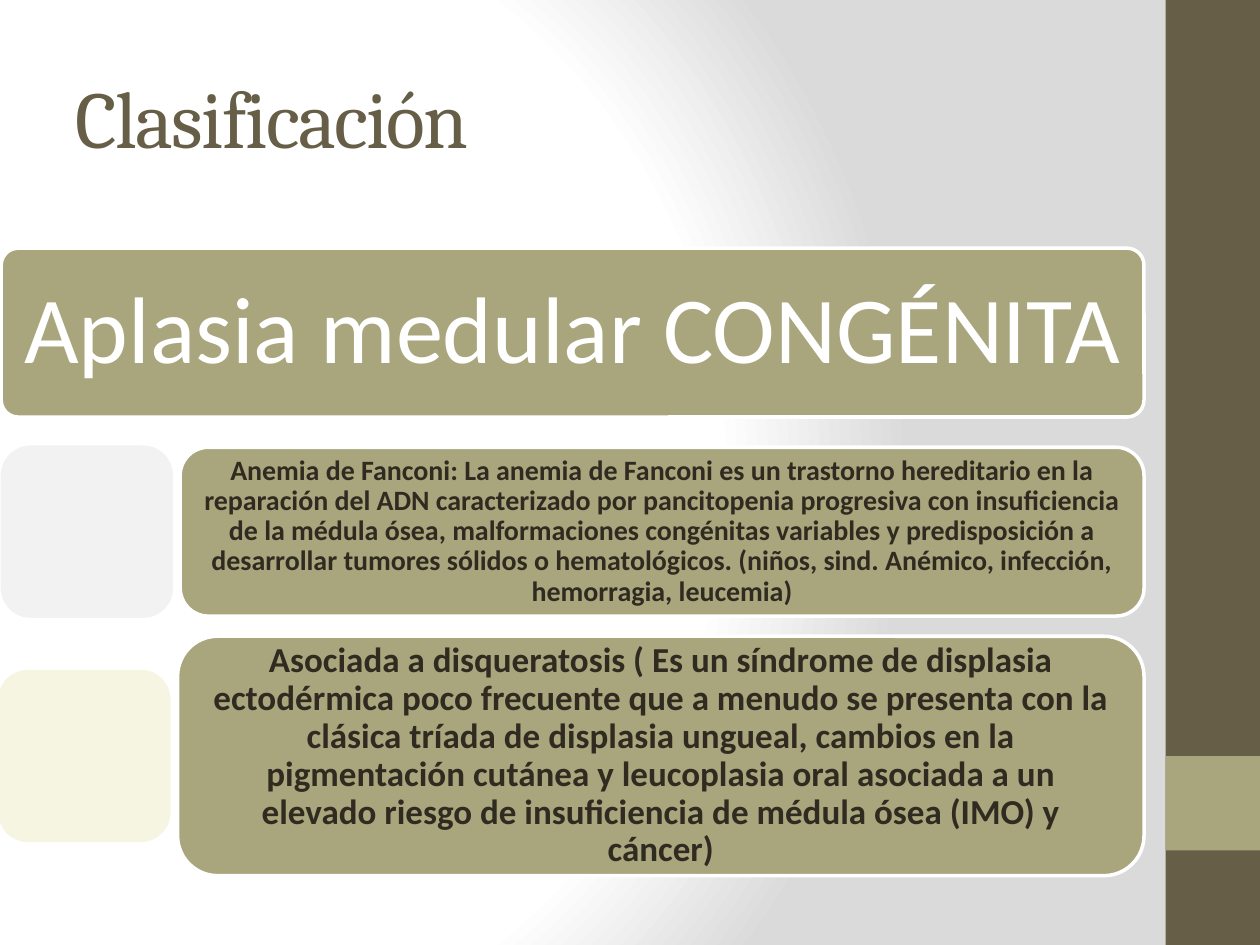
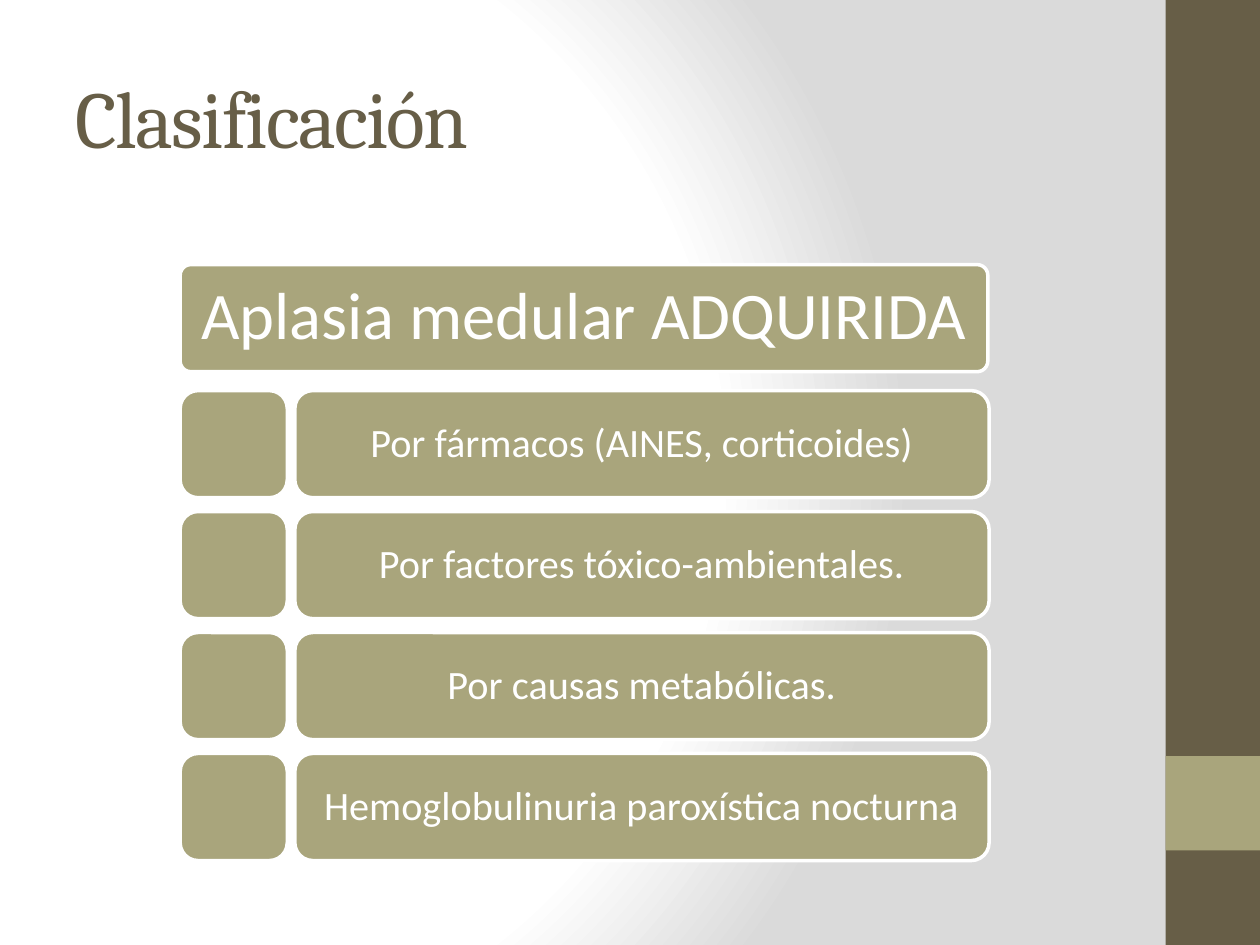
"""Two slides on the classification of medullary aplasia: congenital and acquired."""
from lxml import etree
from pptx import Presentation
from pptx.dml.color import RGBColor
from pptx.enum.shapes import MSO_SHAPE
from pptx.enum.text import MSO_ANCHOR, PP_ALIGN
from pptx.oxml import parse_xml
from pptx.oxml.ns import nsdecls, qn
from pptx.util import Inches, Pt

RECT, ROUNDED = MSO_SHAPE.RECTANGLE, MSO_SHAPE.ROUNDED_RECTANGLE
MIDDLE = MSO_ANCHOR.MIDDLE
LEFT, CENTER = PP_ALIGN.LEFT, PP_ALIGN.CENTER

COLORS = {
    "brown": "675E47",
    "olive": "A9A57C",
    "dark": "2F2B20",
    "white": "FFFFFF",
    "gray": "DADADA",
    "pale_gray": "F2F2F2",
    "cream": "F6F5E2",
}
HEADING_FONT, BODY_FONT = "Cambria", "Calibri"


def rgb(name):
    return RGBColor.from_string(COLORS[name])


def add_box(s, x, y, w, h, fill="olive", line="white", adj=0.167,
            text="", size=23, color="white", bold=False, inset=(0.18, 0.18)):
    sp = s.shapes.add_shape(ROUNDED, Inches(x), Inches(y), Inches(w), Inches(h))
    sp.adjustments[0] = adj
    sp.shadow.inherit = False
    sp.fill.solid()
    sp.fill.fore_color.rgb = rgb(fill)
    sp.line.color.rgb = rgb(line)
    sp.line.width = Pt(2)
    if text:
        tf = sp.text_frame
        tf.word_wrap = True
        tf.vertical_anchor = MIDDLE
        tf.margin_left = tf.margin_right = Inches(inset[0])
        tf.margin_top = tf.margin_bottom = Inches(inset[1])
        p = tf.paragraphs[0]
        p.alignment = CENTER
        p.line_spacing = 0.9
        r = p.add_run()
        r.text = text
        r.font.name = BODY_FONT
        r.font.size = Pt(size)
        r.font.bold = bold
        r.font.color.rgb = rgb(color)


prs = Presentation()
prs.slide_width, prs.slide_height = Inches(10), Inches(7.5)
master = prs.slide_master

master.background.fill.solid()
bg = master.element.find(".//" + qn("p:bgPr"))
bg.remove(bg.find(qn("a:solidFill")))
gradient = parse_xml(
    f'<a:gradFill rotWithShape="1" {nsdecls("a")}><a:gsLst/><a:path path="circle">'
    '<a:fillToRect l="20000" t="50000" r="100000" b="50000"/></a:path></a:gradFill>')
for percent, name in [(0, "white"), (75, "white"), (100, "gray")]:
    stop = etree.SubElement(gradient[0], qn("a:gs"), pos=str(percent * 1000))
    etree.SubElement(stop, qn("a:srgbClr"), val=COLORS[name])
bg.insert(0, gradient)

slides = []
for _ in range(2):
    s = prs.slides.add_slide(prs.slide_layouts[5])
    title = s.shapes.title
    title.left, title.top = Inches(0.5), Inches(0.3)
    title.width, title.height = Inches(8.33), Inches(1.25)
    tf = title.text_frame
    tf.vertical_anchor = MIDDLE
    p = tf.paragraphs[0]
    p.alignment = LEFT
    r = p.add_run()
    r.text = "Clasificación"
    r.font.name = HEADING_FONT
    r.font.size = Pt(46)
    r.font.color.rgb = rgb("brown")
    r.font._element.set("spc", "-100")
    slides.append(s)
congenital, acquired = slides

for i, (y, h, name) in enumerate([(0, 7.5, "brown"), (6, 0.75, "olive")]):
    band = congenital.shapes.add_shape(RECT, Inches(9.25), Inches(y), Inches(0.75), Inches(h))
    band.shadow.inherit = False
    band.fill.solid()
    band.fill.fore_color.rgb = rgb(name)
    band.line.fill.background()
    band.element.nvSpPr.cNvPr.id = 20 + i
    master.shapes.element.insert(2 + i, band.element)

add_box(congenital, 0.01, 1.97, 9.07, 1.34, adj=0.1, size=54, inset=(0.11, 0.07),
        text="Aplasia medular CONGÉNITA")
add_box(congenital, 0.02, 3.55, 1.34, 1.34, fill="pale_gray", line="pale_gray")
add_box(congenital, 1.43, 3.55, 7.65, 1.34, size=16, color="dark", bold=True, inset=(0.12, 0.12),
        text="Anemia de Fanconi: La anemia de Fanconi es un trastorno hereditario en la "
             "reparación del ADN caracterizado por pancitopenia progresiva con insuficiencia "
             "de la médula ósea, malformaciones congénitas variables y predisposición a "
             "desarrollar tumores sólidos o hematológicos. (niños, sind. Anémico, infección, "
             "hemorragia, leucemia)")
add_box(congenital, 0, 5.33, 1.34, 1.34, fill="cream", line="cream")
add_box(congenital, 1.41, 5.05, 7.67, 1.9, size=20, color="dark", bold=True, inset=(0.16, 0.16),
        text="Asociada a disqueratosis ( Es un síndrome de displasia ectodérmica poco "
             "frecuente que a menudo se presenta con la clásica tríada de displasia ungueal, "
             "cambios en la pigmentación cutánea y leucoplasia oral asociada a un elevado "
             "riesgo de insuficiencia de médula ósea (IMO) y cáncer)")

add_box(acquired, 1.43, 2.1, 6.41, 0.85, adj=0.1, size=38, inset=(0.08, 0.05),
        text="Aplasia medular ADQUIRIDA")
causes = [
    "Por fármacos (AINES, corticoides)",
    "Por factores tóxico-ambientales.",
    "Por causas metabólicas.",
    "Hemoglobulinuria paroxística nocturna",
]
for i, cause in enumerate(causes):
    y = 3.1 + 0.96 * i
    add_box(acquired, 1.43, y, 0.85, 0.85)
    add_box(acquired, 2.34, y, 5.51, 0.85, text=cause)

prs.save("out.pptx")
